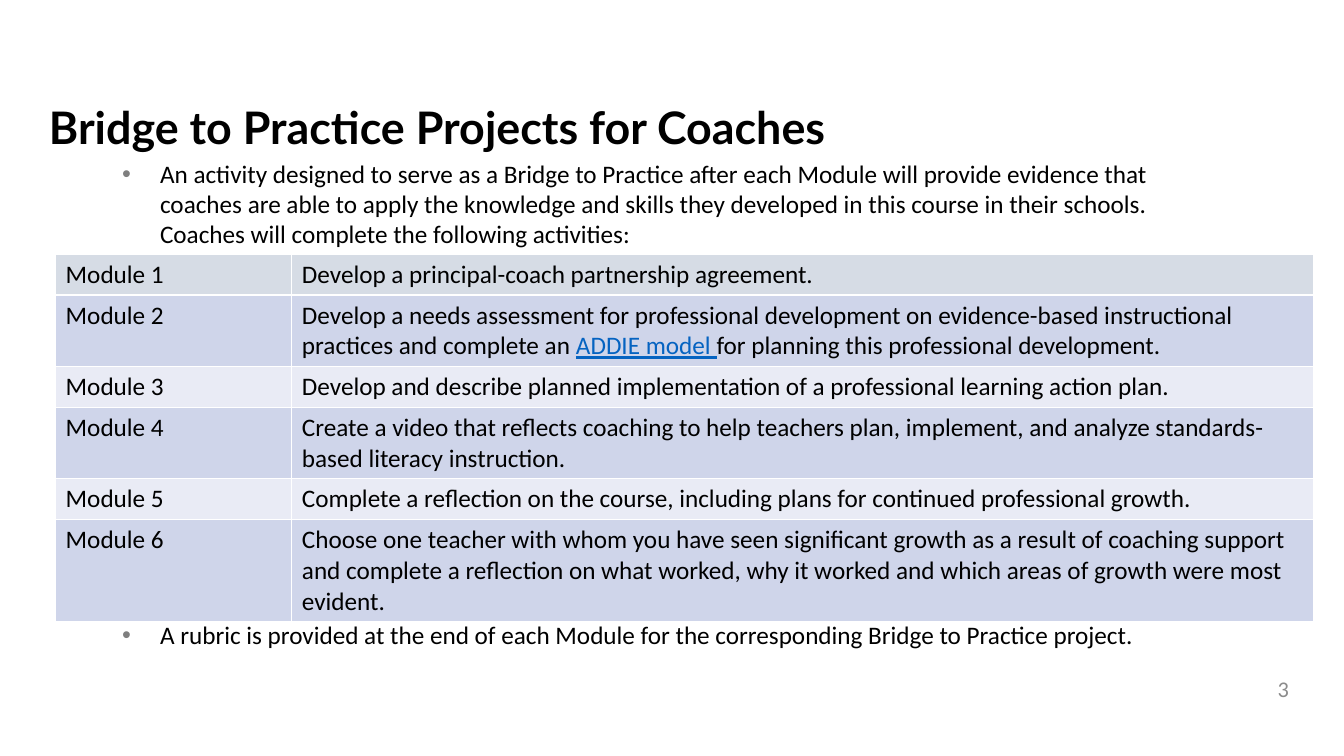
from lxml import etree
from pptx import Presentation
from pptx import util as u
from pptx.dml.color import RGBColor
from pptx.enum import text
from pptx.oxml import ns

PX = 9525
BLACK, WHITE, GREY, LINK = "000000", "FFFFFF", "8C8C8C", "0563C1"
HEAD, DARK, PALE = "D6DCE5", "CFD5EA", "E9EBF5"

INTRO = (
    "An activity designed to serve as a Bridge to Practice after each Module "
    "will provide evidence that coaches are able to apply the knowledge and "
    "skills they developed in this course in their schools. Coaches will "
    "complete the following activities:"
)
RUBRIC = (
    "A rubric is provided at the end of each Module for the corresponding "
    "Bridge to Practice project."
)
TASKS = [
    (1, ["Develop a principal-coach partnership agreement."]),
    (2, [
        "Develop a needs assessment for professional development on "
        "evidence-based instructional practices and complete an ",
        ("ADDIE model ", LINK),
        "for planning this professional development.",
    ]),
    (1, ["Develop and describe planned implementation of a professional "
         "learning action plan."]),
    (2, ["Create a video that reflects coaching to help teachers plan, "
         "implement, and analyze standards-based literacy instruction."]),
    (1, ["Complete a reflection on the course, including plans for continued "
         "professional growth."]),
    (3, ["Choose one teacher with whom you have seen significant growth as a "
         "result of coaching support and complete a reflection on what worked, "
         "why it worked and which areas of growth were most evident."]),
]


def px(n):
    return u.Emu(n * PX)


def rgb(code):
    return RGBColor.from_string(code)


def node(parent, tag, **attrs):
    return etree.SubElement(parent, ns.qn(tag), **attrs)


def add_run(para, words, size=18, color=BLACK, face="Calibri"):
    run = para.add_run()
    run.text = words
    run.font.size = u.Pt(size)
    run.font.name = face
    run.font.color.rgb = rgb(color)
    return run


def add_box(slide, box):
    frame = slide.shapes.add_textbox(*map(px, box)).text_frame
    frame.word_wrap = True
    return frame


def add_title(slide, box, words):
    title = slide.shapes.title
    title.left, title.top, title.width, title.height = map(px, box)
    frame = title.text_frame
    frame.vertical_anchor = text.MSO_ANCHOR.MIDDLE
    para = frame.paragraphs[0]
    para.alignment = text.PP_ALIGN.LEFT
    add_run(para, words, 32, face="Lato").font.bold = True


def add_point(slide, box, words):
    para = add_box(slide, box).paragraphs[0]
    props = para._p.get_or_add_pPr()
    props.set("marL", str(px(36)))
    props.set("indent", str(px(-36)))
    node(node(props, "a:buClr"), "a:srgbClr", val="7F7F7F")
    node(props, "a:buFont", typeface="Arial")
    node(props, "a:buChar", char="•")
    add_run(para, words)


def add_edges(cell):
    props = cell._tc.get_or_add_tcPr()
    for tag in ("a:lnL", "a:lnR", "a:lnT", "a:lnB"):
        line = node(props, tag, w=str(u.Pt(1)))
        node(node(line, "a:solidFill"), "a:srgbClr", val=WHITE)


def fill_cell(cell, parts, color):
    add_edges(cell)
    cell.fill.solid()
    cell.fill.fore_color.rgb = rgb(color)
    para = cell.text_frame.paragraphs[0]
    for part in parts:
        if isinstance(part, tuple):
            add_run(para, part[0], color=part[1]).font.underline = True
        else:
            add_run(para, part)


def add_tasks(slide, box):
    table = slide.shapes.add_table(len(TASKS), 2, *map(px, box)).table
    label = 225
    table.columns[0].width = px(label)
    table.columns[1].width = px(box[2] - label)
    for i, (lines, parts) in enumerate(TASKS):
        table.rows[i].height = px(10 + 29 * lines)
        color = HEAD if i == 0 else (DARK if i % 2 else PALE)
        fill_cell(table.cell(i, 0), [f"Module {i + 1}"], color)
        fill_cell(table.cell(i, 1), parts, color)


def add_number(slide, box, words):
    frame = add_box(slide, box)
    frame.vertical_anchor = text.MSO_ANCHOR.MIDDLE
    para = frame.paragraphs[0]
    para.alignment = text.PP_ALIGN.RIGHT
    add_run(para, words, 16, GREY)


def main():
    deck = Presentation()
    deck.slide_width, deck.slide_height = px(1280), px(720)
    slide = deck.slides.add_slide(deck.slide_layouts[5])
    add_title(slide, (37, 76, 871, 90), "Bridge to Practice Projects for Coaches")
    add_point(slide, (107, 146, 1022, 97), INTRO)
    add_tasks(slide, (53, 242, 1198, 350))
    add_point(slide, (107, 585, 1022, 39), RUBRIC)
    add_number(slide, (1013, 641, 224, 29), "3")
    deck.save("out.pptx")


if __name__ == "__main__":
    main()
